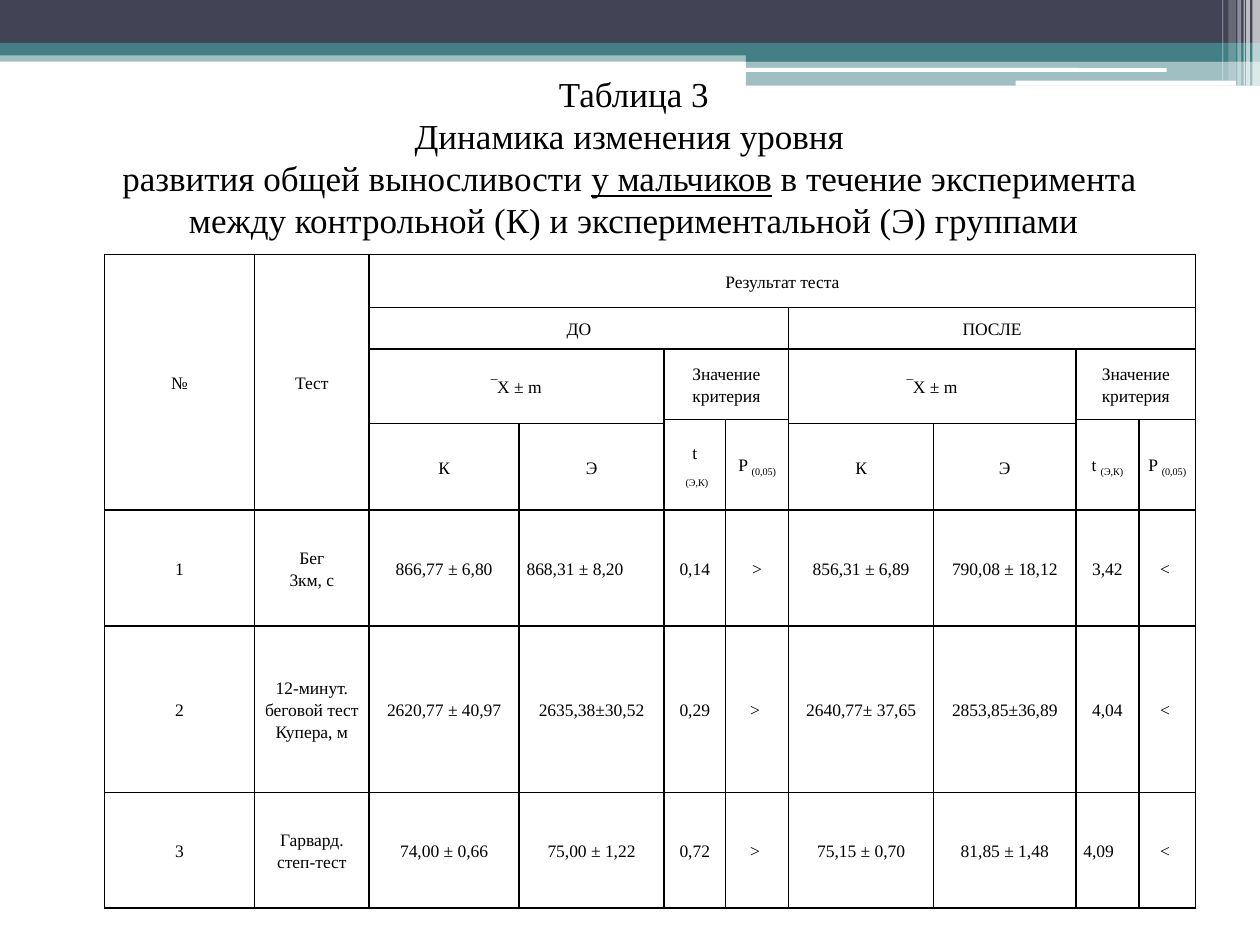
from dataclasses import dataclass

from lxml import etree
from pptx import Presentation
from pptx.dml.color import RGBColor
from pptx.enum.shapes import MSO_SHAPE
from pptx.enum.text import MSO_ANCHOR, MSO_AUTO_SIZE, PP_ALIGN
from pptx.oxml.ns import qn
from pptx.util import Inches, Pt

RECTANGLE, ROUNDED = MSO_SHAPE.RECTANGLE, MSO_SHAPE.ROUNDED_RECTANGLE
LEFT, CENTER = PP_ALIGN.LEFT, PP_ALIGN.CENTER
MIDDLE = MSO_ANCHOR.MIDDLE
NO_AUTOFIT = MSO_AUTO_SIZE.NONE


@dataclass(frozen=True)
class Theme:
    """Colours, font and type sizes of the deck."""

    dark: str = "424456"
    teal: str = "438086"
    white: str = "FFFFFF"
    ink: str = "000000"
    font: str = "Times New Roman"
    title_size: int = 20
    table_size: int = 10
    border: int = 1


THEME = Theme()

BANDS = [
    (0, 0.4, 10, 0.09, THEME.teal, 50),
    (0, 0, 10, 0.34, THEME.dark, 100),
    (0, 0.34, 10, 0.1, THEME.teal, 100),
    (5.92, 0.39, 4.08, 0.1, THEME.teal, 100),
    (5.92, 0.48, 4.08, 0.2, THEME.teal, 50),
]
HIGHLIGHTS = [(5.91, 0.54, 3.35, 0.03), (8.06, 0.64, 1.75, 0.04)]
STRIPES = [
    (9.94, 0.06, 0.68, 65),
    (9.89, 0.03, 0.68, 65),
    (9.87, 0.01, 0.68, 60),
    (9.82, 0.03, 0.68, 40),
    (9.75, 0.06, 0.64, 20),
    (9.7, 0.01, 0.64, 30),
]

TITLE = [
    "Таблица 3",
    "Динамика изменения уровня ",
    "развития общей выносливости _у мальчиков_ в течение эксперимента ",
    "между контрольной (К) и экспериментальной (Э) группами",
]

COLUMNS = [1.19, 0.91, 1.19, 1.15, 0.49, 0.5, 1.15, 1.13, 0.5, 0.45]
ROWS = [0.42, 0.33, 0.56, 0.03, 0.69, 0.92, 1.32, 0.92]
HEADINGS = [
    (0, 0, 5, 1, ["№"]),
    (0, 1, 5, 1, ["Тест"]),
    (0, 2, 1, 8, ["Результат теста"]),
]
PERIODS = [(2, "ДО", ["t", " _(Э,К)"]), (6, "ПОСЛЕ", ["t _(Э,К)"])]
RESULTS = [
    ["1", "Бег\n3км, с", "866,77 ± 6,80", "868,31 ± 8,20", "0,14", ">",
     "856,31 ± 6,89", "790,08 ± 18,12", "3,42", "< "],
    ["2", "12-минут. беговой тест Купера, м", "2620,77 ± 40,97", "2635,38±30,52", "0,29", "> ",
     "2640,77± 37,65", "2853,85±36,89", "4,04", "< "],
    ["3", "Гарвард. степ-тест", "74,00 ± 0,66", "75,00 ± 1,22", "0,72", "> ",
     "75,15 ± 0,70", "81,85 ± 1,48", "4,09", "< "],
]
FIRST_RESULT_ROW = 5
LEFT_ALIGNED = {"868,31 ± 8,20", "4,09"}


def set_values(target, values):
    """Set each attribute of the target from a dict."""
    for name, value in values.items():
        setattr(target, name, value)


def add_band(page, kind, place, colour, opacity=100):
    """Add a plain filled shape with the given opacity in percent."""
    band = page.shapes.add_shape(kind, *map(Inches, place))
    band.shadow.inherit = False
    band.line.fill.background()
    band.fill.solid()
    band.fill.fore_color.rgb = RGBColor.from_string(colour)
    if opacity < 100:
        colour_node = band.fill._xPr.find(qn("a:solidFill"))[0]
        etree.SubElement(colour_node, qn("a:alpha"), val=str(opacity * 1000))


def write_lines(frame, lines, size, mark, align=CENTER, spacing=None):
    """Write one paragraph per line, marking the spans between underscores."""
    for index, line in enumerate(lines):
        para = frame.paragraphs[0] if index == 0 else frame.add_paragraph()
        set_values(para, {"alignment": align, "line_spacing": spacing})
        for position, text in enumerate(line.split("_")):
            span = para.add_run()
            span.text = text
            set_values(span.font, {"name": THEME.font, "size": Pt(size)})
            span.font.color.rgb = RGBColor.from_string(THEME.ink)
            if position % 2:
                mark(span)


def underline(span):
    """Underline a span."""
    span.font.underline = True


def lower(span):
    """Turn a span into a subscript."""
    span._r.get_or_add_rPr().set("baseline", "-25000")


def add_title(page):
    """Place and write the title."""
    title = page.shapes.title
    set_values(title, {"left": Inches(0.83), "top": Inches(0.52),
                       "width": Inches(8.4), "height": Inches(1.45)})
    set_values(title.text_frame, {"word_wrap": False, "auto_size": NO_AUTOFIT,
                                  "vertical_anchor": MIDDLE})
    write_lines(title.text_frame, TITLE, THEME.title_size, underline)


def format_cell(cell):
    """Give a cell its margins, borders and empty fill."""
    set_values(cell, {"margin_left": Inches(0.06), "margin_right": Inches(0.06),
                      "margin_top": 0, "margin_bottom": 0, "vertical_anchor": MIDDLE})
    cell.text_frame.paragraphs[0].font.size = Pt(THEME.table_size)
    properties = cell._tc.get_or_add_tcPr()
    for side in ("a:lnL", "a:lnR", "a:lnT", "a:lnB"):
        line = etree.SubElement(properties, qn(side), w=str(Pt(THEME.border)))
        fill = etree.SubElement(line, qn("a:solidFill"))
        etree.SubElement(fill, qn("a:srgbClr"), val=THEME.ink)
    cell.fill.background()


def period_headings(column, period, t_lines):
    """Return the headings that both test periods share."""
    return [
        (1, column, 1, 4, [period]),
        (2, column, 2, 2, ["‾Х ± m"]),
        (2, column + 2, 1, 2, ["Значение критерия"]),
        (3, column + 2, 2, 1, t_lines),
        (3, column + 3, 2, 1, ["P _(0,05)"]),
        (4, column, 1, 1, ["К"]),
        (4, column + 1, 1, 1, ["Э"]),
    ]


def add_results_table(page):
    """Add the table with merged headings and the test results."""
    frame = page.shapes.add_table(len(ROWS), len(COLUMNS), Inches(0.83), Inches(2.02),
                                  Inches(sum(COLUMNS)), Inches(sum(ROWS)))
    table = frame.table
    set_values(table, {"first_row": False, "horz_banding": False})
    for column, width in zip(table.columns, COLUMNS):
        column.width = Inches(width)
    for row, height in zip(table.rows, ROWS):
        row.height = Inches(height)
    for cell in table.iter_cells():
        format_cell(cell)
    entries = list(HEADINGS)
    for period in PERIODS:
        entries += period_headings(*period)
    for row, values in enumerate(RESULTS, FIRST_RESULT_ROW):
        entries += [(row, column, 1, 1, text.split("\n")) for column, text in enumerate(values)]
    for row, column, height, width, lines in entries:
        cell = table.cell(row, column)
        if height * width > 1:
            cell.merge(table.cell(row + height - 1, column + width - 1))
        align = LEFT if lines[0] in LEFT_ALIGNED else CENTER
        write_lines(cell.text_frame, lines, THEME.table_size, lower, align, 1.15)


def main():
    """Build the slide and save the deck."""
    deck = Presentation()
    set_values(deck, {"slide_width": Inches(10), "slide_height": Inches(7.5)})
    page = deck.slides.add_slide(deck.slide_layouts.get_by_name("Title Only"))
    for *place, colour, opacity in BANDS:
        add_band(page, RECTANGLE, place, colour, opacity)
    for place in HIGHLIGHTS:
        add_band(page, ROUNDED, place, THEME.white)
    for left, width, height, opacity in STRIPES:
        add_band(page, RECTANGLE, (left, 0, width, height), THEME.white, opacity)
    add_results_table(page)
    add_title(page)
    deck.save("out.pptx")


if __name__ == "__main__":
    main()
